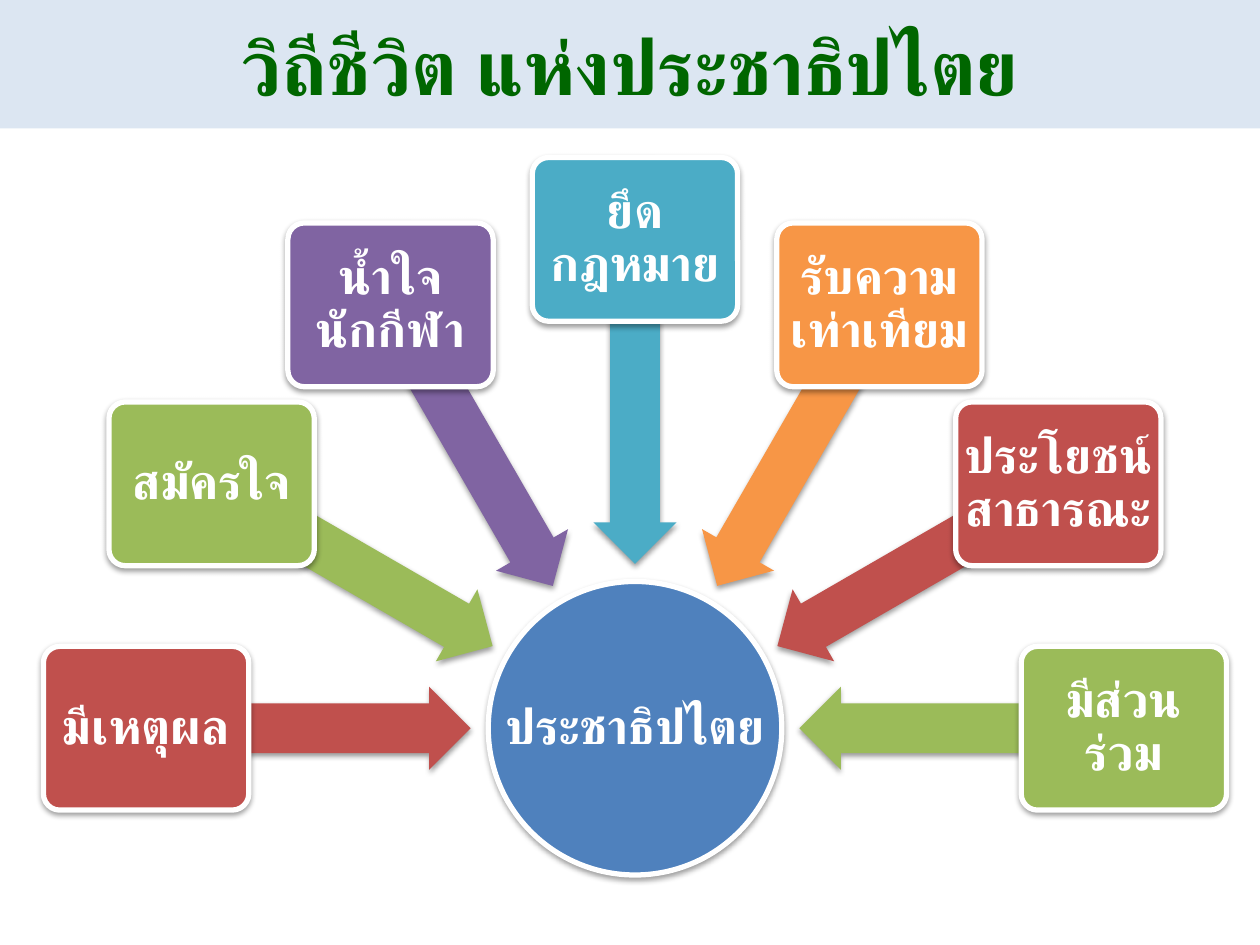
"""Build a radial slide of the democratic way of life."""
import math

import pptx
import pptx.util
import pptx.dml.color
import pptx.enum.lang
import pptx.enum.shapes
import pptx.enum.text
import pptx.oxml
import pptx.oxml.ns

TITLE = "วิถีชีวิต แห่งประชาธิปไตย"
HUB = "ประชาธิปไตย"
PRINCIPLES = [
    ("มีเหตุผล", "red"),
    ("สมัครใจ", "green"),
    ("น้ำใจนักกีฬา", "purple"),
    ("ยึดกฎหมาย", "teal"),
    ("รับความเท่าเทียม", "orange"),
    ("ประโยชน์สาธารณะ", "red"),
    ("มีส่วนร่วม", "green"),
]
COLORS = {
    "band": "DCE6F2", "title": "006600", "white": "FFFFFF", "blue": "4F81BD",
    "red": "C0504D", "green": "9BBB59", "purple": "8064A2",
    "teal": "4BACC6", "orange": "F79646",
}
FONT = "Roboto"
WIDTH, HEIGHT, BAND_HEIGHT = 10, 7.5, 1.02
CENTER_X, CENTER_Y = 5.04, 5.78
HUB_SIZE = (2.33, 2.33)
CARD_SIZE, CARD_RADIUS = (1.63, 1.3), 3.88
ARROW_SIZE, ARROW_RADIUS = (2.57, 0.66), 2.59
KINDS = pptx.enum.shapes.MSO_SHAPE
SHADOW = (
    '<a:outerShdw %s blurRad="40000" dist="20000" dir="5400000" rotWithShape="0">'
    '<a:srgbClr val="000000"><a:alpha val="38000"/></a:srgbClr></a:outerShdw>'
    % pptx.oxml.ns.nsdecls("a")
)


def rgb(name):
    return pptx.dml.color.RGBColor.from_string(COLORS[name])


def write(holder, text, size=28, color="white", inset=0.02, spacing=0.9, wrap=True):
    frame = holder.text_frame
    frame.auto_size = pptx.enum.text.MSO_AUTO_SIZE.NONE
    frame.word_wrap = wrap
    frame.vertical_anchor = pptx.enum.text.MSO_ANCHOR.MIDDLE
    frame.margin_left = frame.margin_right = pptx.util.Inches(inset)
    frame.margin_top = frame.margin_bottom = pptx.util.Inches(inset)
    paragraph = frame.paragraphs[0]
    paragraph.alignment = pptx.enum.text.PP_ALIGN.CENTER
    paragraph.line_spacing = spacing
    run = paragraph.add_run()
    run.text = text
    font = run.font
    font.size, font.bold, font.name = pptx.util.Pt(size), True, FONT
    font.color.rgb = rgb(color)
    font.language_id = pptx.enum.lang.MSO_LANGUAGE_ID.THAI
    script = pptx.oxml.parse_xml(
        '<a:cs %s typeface="%s"/>' % (pptx.oxml.ns.nsdecls("a"), FONT))
    run._r.rPr.append(script)


def place(slide, kind, size, color, radius=0, angle=0, outlined=True):
    width, height = size
    x = CENTER_X - radius * math.cos(math.radians(angle))
    y = CENTER_Y - radius * math.sin(math.radians(angle))
    box = [pptx.util.Inches(v) for v in (x - width / 2, y - height / 2, width, height)]
    shape = slide.shapes.add_shape(kind, *box)
    shape.fill.solid()
    shape.fill.fore_color.rgb = rgb(color)
    if outlined:
        shape.line.color.rgb = rgb("white")
        shape.line.width = pptx.util.Pt(3)
    else:
        shape.line.fill.background()
    shape.shadow.inherit = False
    effects = shape._element.spPr.find(pptx.oxml.ns.qn("a:effectLst"))
    effects.append(pptx.oxml.parse_xml(SHADOW))
    return shape


def main():
    deck = pptx.Presentation()
    deck.slide_width = pptx.util.Inches(WIDTH)
    deck.slide_height = pptx.util.Inches(HEIGHT)
    slide = deck.slides.add_slide(deck.slide_layouts[5])

    title = slide.shapes.title
    title.left, title.top = 0, 0
    title.width = pptx.util.Inches(WIDTH)
    title.height = pptx.util.Inches(BAND_HEIGHT)
    title.fill.solid()
    title.fill.fore_color.rgb = rgb("band")
    write(title, TITLE, size=44, color="title", inset=0.05, spacing=1.0)

    hub = place(slide, KINDS.OVAL, HUB_SIZE, "blue")
    write(hub, HUB, wrap=False)

    step = 180 / (len(PRINCIPLES) - 1)
    for index, (principle, color) in enumerate(PRINCIPLES):
        angle = index * step
        arrow = place(slide, KINDS.LEFT_ARROW, ARROW_SIZE, color,
                      ARROW_RADIUS, angle, outlined=False)
        arrow.rotation = (180 + angle) % 360
        arrow.adjustments[0], arrow.adjustments[1] = 0.6, 0.5
        card = place(slide, KINDS.ROUNDED_RECTANGLE, CARD_SIZE, color,
                     CARD_RADIUS, angle)
        card.adjustments[0] = 0.1
        write(card, principle)

    deck.save("out.pptx")


if __name__ == "__main__":
    main()
